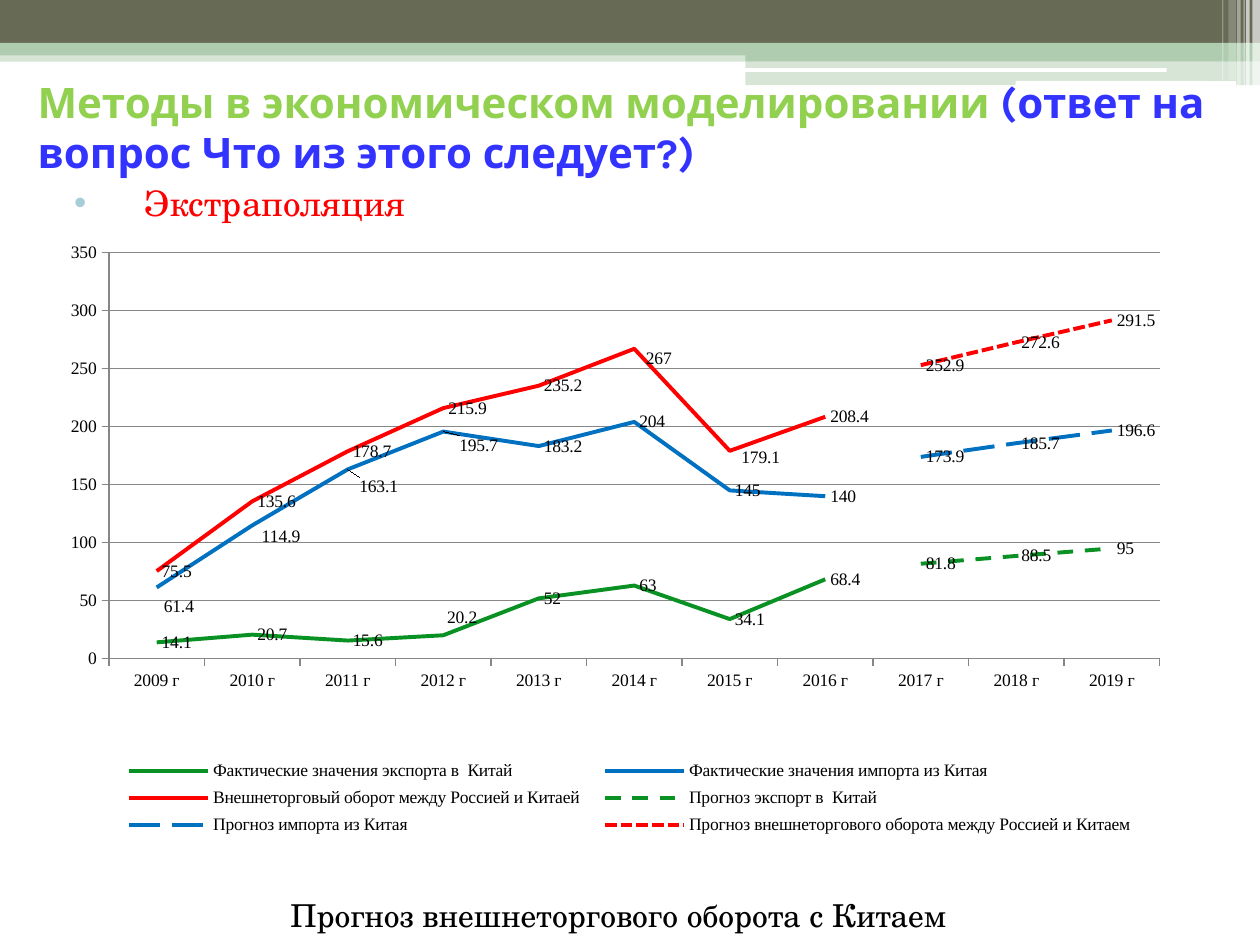
from lxml.etree import SubElement
from pptx import Presentation
from pptx.chart.data import CategoryChartData
from pptx.dml.color import RGBColor
from pptx.enum.chart import XL_CHART_TYPE, XL_LABEL_POSITION, XL_LEGEND_POSITION, XL_TICK_MARK
from pptx.enum.dml import MSO_LINE
from pptx.enum.shapes import MSO_SHAPE
from pptx.enum.text import MSO_ANCHOR, PP_ALIGN
from pptx.oxml import parse_xml
from pptx.oxml.ns import nsdecls, qn
from pptx.util import Pt

COLORS = {
    "olive": "676A55", "sage": "B0CCB0", "white": "FFFFFF", "black": "000000",
    "bullet": "A8CDD7", "lime": "92D050", "violet": "3333FF", "grid": "878787",
    "green": "099123", "blue": "0070C0", "red": "FF0000",
}
SERIF, SANS, CHART = "TeX Gyre Schola", "Karla", "Times New Roman"


def rgb(name):
    return RGBColor.from_string(COLORS[name])


def layout_xml(modes="", **sizes):
    """Manual chart layout; modes is the XML that goes before the sizes."""
    body = "".join(f'<c:{key} val="{val}"/>' for key, val in sizes.items())
    return parse_xml(f'<c:layout {nsdecls("c")}><c:manualLayout>{modes}{body}'
                     '</c:manualLayout></c:layout>')


class Board:
    def __init__(self, slide):
        self.slide = slide

    def bar(self, box, color, alpha=100, kind=MSO_SHAPE.RECTANGLE):
        shape = self.slide.shapes.add_shape(kind, *map(Pt, box))
        shape.shadow.inherit = False
        shape.line.fill.background()
        shape.fill.solid()
        shape.fill.fore_color.rgb = rgb(color)
        if alpha < 100:
            tone = shape.fill._xPr.find(".//" + qn("a:srgbClr"))
            SubElement(tone, qn("a:alpha"), val=str(alpha * 1000))

    def text(self, box, parts, font, size, bold=False, align=PP_ALIGN.LEFT,
             anchor=MSO_ANCHOR.TOP, bullet=None):
        """Add one paragraph; parts holds (words, colour) pairs."""
        frame = self.slide.shapes.add_textbox(*map(Pt, box)).text_frame
        frame.word_wrap = True
        frame.vertical_anchor = anchor
        para = frame.paragraphs[0]
        para.alignment = align
        if bullet:
            props = para._p.get_or_add_pPr()
            indent = Pt(40.5)
            props.set("marL", str(indent))
            props.set("indent", str(-indent))
            tint = SubElement(props, qn("a:buClr"))
            SubElement(tint, qn("a:srgbClr"), val=COLORS[bullet])
            SubElement(props, qn("a:buFont"), typeface="Arial")
            SubElement(props, qn("a:buChar"), char="•")
        for words, color in parts:
            run = para.add_run()
            run.text = words
            run.font.name, run.font.size, run.font.bold = font, Pt(size), bold
            run.font.color.rgb = rgb(color)

    def axis(self, axis):
        axis.major_tick_mark = XL_TICK_MARK.OUTSIDE
        axis.minor_tick_mark = XL_TICK_MARK.NONE
        axis.format.line.color.rgb = rgb("grid")

    def chart(self, box, cats, rows, plot, key):
        """Line chart; plot and key are the places of plot area and legend."""
        data = CategoryChartData()
        data.categories = cats
        for name, vals, *_ in rows:
            data.add_series(name, vals)
        chart = self.slide.shapes.add_chart(
            XL_CHART_TYPE.LINE, *map(Pt, box), data).chart
        chart.has_title = False
        chart.font.name, chart.font.size = CHART, Pt(10)
        chart.font.color.rgb = rgb("black")
        self.axis(chart.category_axis)
        self.axis(chart.value_axis)
        chart.value_axis.minimum_scale = 0
        chart.value_axis.maximum_scale = 350
        chart.value_axis.major_unit = 50
        chart.value_axis.major_gridlines.format.line.color.rgb = rgb("grid")

        chart.plots[0].vary_by_categories = False
        for series, (_, _, color, dash, shifts) in zip(chart.plots[0].series, rows):
            series.smooth = False
            line = series.format.line
            line.color.rgb, line.width, line.dash_style = rgb(color), Pt(2.25), dash
            labels = series.data_labels
            labels.show_value = True
            labels.position = XL_LABEL_POSITION.RIGHT
            for spot, (x, y) in shifts.items():
                series.points[spot].data_label.position = XL_LABEL_POSITION.RIGHT
                for label in labels._element.findall(qn("c:dLbl")):
                    if label.find(qn("c:idx")).get("val") == str(spot):
                        label.insert(1, layout_xml(x=x, y=y))

        chart.has_legend = True
        chart.legend.position = XL_LEGEND_POSITION.RIGHT
        chart.legend.include_in_layout = False
        edges = '<c:xMode val="edge"/><c:yMode val="edge"/>'
        area = chart._chartSpace.find(".//" + qn("c:plotArea"))
        for old in area.findall(qn("c:layout")):
            area.remove(old)
        area.insert(0, layout_xml('<c:layoutTarget val="inner"/>' + edges, **plot))
        legend = chart.legend._element
        for old in legend.findall(qn("c:layout")):
            legend.remove(old)
        legend.find(qn("c:legendPos")).addnext(layout_xml(edges, **key))


def main():
    deck = Presentation()
    deck.slide_width, deck.slide_height = Pt(720), Pt(540)
    board = Board(deck.slides.add_slide(deck.slide_layouts[6]))

    for box, color, alpha in [
        ((0, 28.8, 720, 6.5), "sage", 50),
        ((0, 0, 720, 24.5), "olive", 100),
        ((0, 24.5, 720, 7.2), "sage", 100),
        ((426, 28, 294, 7), "sage", 100),
        ((426, 34.7, 294, 14), "sage", 50),
    ]:
        board.bar(box, color, alpha)
    for box in [(425.5, 38.9, 241.2, 2.2), (580.3, 46.3, 126, 2.7)]:
        board.bar(box, "white", kind=MSO_SHAPE.ROUNDED_RECTANGLE)
    for left, width, height, alpha in [
        (715.7, 4.3, 48.9, 65), (712.1, 2, 48.9, 65), (710.6, 0.7, 48.9, 60),
        (707, 2, 48.9, 40), (702, 4.3, 46, 20), (698.4, 0.7, 46, 30),
    ]:
        board.bar((left, 0, width, height), "white", alpha)

    board.text((35.3, 100, 648, 34), [("Экстраполяция", "red")], SERIF, 20,
               align=PP_ALIGN.JUSTIFY, bullet="bullet")
    board.text((14.4, 50.4, 692, 44),
               [("Методы в экономическом моделировании ", "lime"),
                ("(ответ на вопрос Что из этого следует?)", "violet")],
               SANS, 24, bold=True, anchor=MSO_ANCHOR.MIDDLE)
    board.text((0.7, 508.3, 705.6, 29),
               [("Прогноз внешнеторгового оборота с Китаем", "black")],
               SERIF, 18, align=PP_ALIGN.CENTER)

    past, ahead = [None] * 3, [None] * 8
    solid = MSO_LINE.SOLID
    rows = [
        ("Фактические значения экспорта в  Китай",
         [14.1, 20.7, 15.6, 20.2, 52, 63, 34.1, 68.4] + past,
         "green", solid, {3: (-0.001, -0.028)}),
        ("Фактические значения импорта из Китая",
         [61.4, 114.9, 163.1, 195.7, 183.2, 204, 145, 140] + past,
         "blue", solid, {0: (0.002, 0.03), 1: (0.004, 0.018),
                         2: (0.006, 0.028), 3: (0.01, 0.022)}),
        ("Внешнеторговый оборот между Россией и Китаей",
         [75.5, 135.6, 178.7, 215.9, 235.2, 267, 179.1, 208.4] + past,
         "red", solid, {5: (0.006, 0.015), 6: (0.006, 0.01)}),
        ("Прогноз экспорт в  Китай", ahead + [81.8, 88.5, 95],
         "green", MSO_LINE.DASH, {}),
        ("Прогноз импорта из Китая", ahead + [173.9, 185.7, 196.6],
         "blue", MSO_LINE.LONG_DASH, {}),
        ("Прогноз внешнеторгового оборота между Россией и Китаем",
         ahead + [252.9, 272.6, 291.5], "red", MSO_LINE.SQUARE_DOT, {}),
    ]
    board.chart((36.7, 133.9, 639.4, 357.8),
                [f"{year} г" for year in range(2009, 2020)], rows,
                plot=dict(x=0.04, y=0.029, w=0.939, h=0.649),
                key=dict(x=0.04, y=0.83, w=0.93, h=0.14))
    deck.save("out.pptx")


if __name__ == "__main__":
    main()
